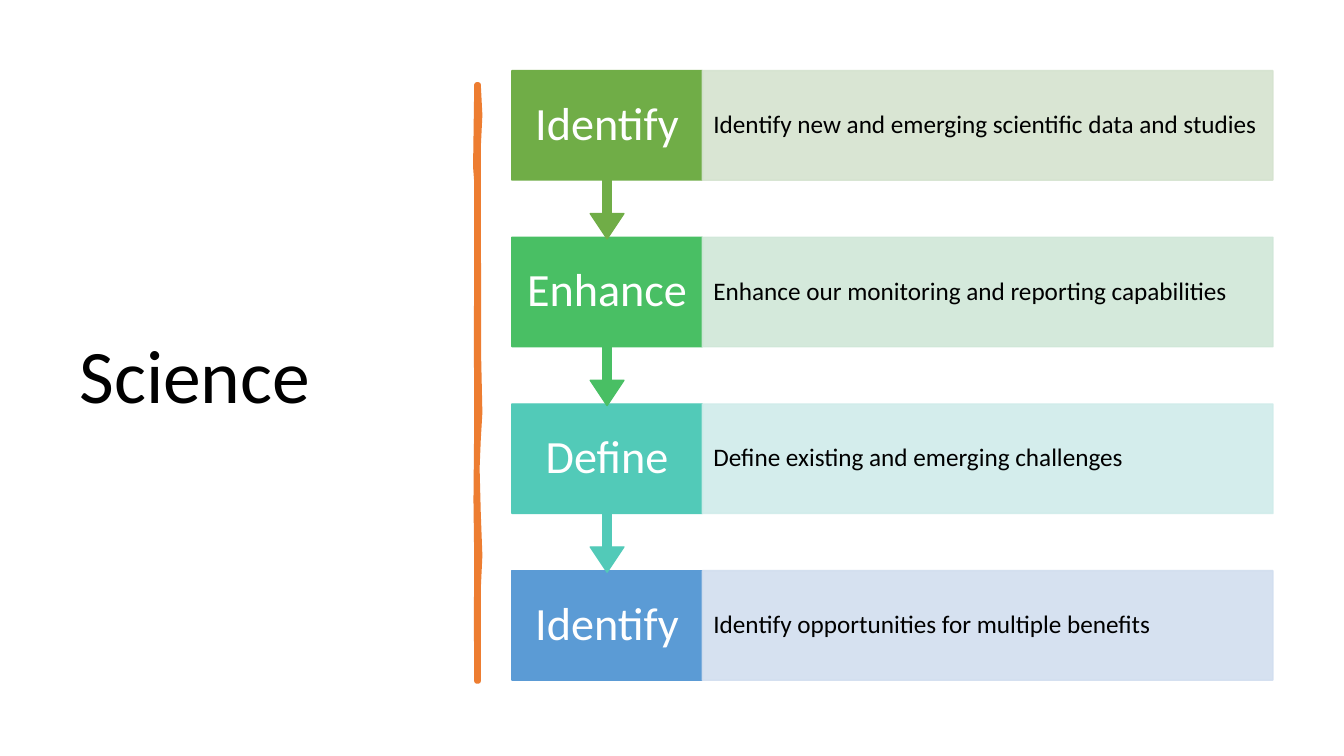
from dataclasses import dataclass

from lxml.etree import SubElement
from pptx import Presentation
from pptx.dml.color import RGBColor
from pptx.enum.shapes import MSO_SHAPE
from pptx.enum.text import MSO_ANCHOR, MSO_AUTO_SIZE, PP_ALIGN
from pptx.oxml.ns import qn
from pptx.util import Cm, Pt


@dataclass(frozen=True)
class Theme:
    font: str = "Calibri"
    title: int = 54
    label: int = 33
    body: int = 18
    ink: str = "000000"
    paper: str = "FFFFFF"
    accent: str = "ED7D31"


STEPS = [
    ("Identify", "Identify new and emerging scientific data and studies", "70AD47", "D5E3CF"),
    ("Enhance", "Enhance our monitoring and reporting capabilities", "49BF64", "D0E7D8"),
    ("Define", "Define existing and emerging challenges", "52CAB8", "D0ECEA"),
    ("Identify", "Identify opportunities for multiple benefits", "5B9BD5", "D2DEEF"),
]
STROKE = [
    (12.06, 2.13), (12.1, 2.9), (12.06, 3.71), (12.06, 5.74), (12.07, 7.47),
    (12.07, 9.04), (12.1, 10.4), (12.06, 11.07), (12.03, 11.8), (12.06, 12.95),
    (12.1, 14), (12.06, 14.83), (12.06, 17.17), (12.01, 17.17), (12, 15.57),
    (12.01, 14.15), (11.99, 12.6), (12.01, 10.54), (12, 8.51), (12.01, 6.35),
    (12.01, 4.6), (11.98, 4.2), (12.01, 2.13),
]
TOP, PITCH, HIGH = 1.78, 4.2, 2.76
LEFT, WIDE = 12.9, 4.8
RIGHT, SPAN = LEFT + WIDE, 14.38
DROP, ADJUST = 4.24, (0.05, 0.1, 0.15, 0.65)


class Deck:
    def __init__(self, theme):
        self.theme = theme
        self.file = Presentation()
        self.file.slide_width, self.file.slide_height = Cm(33.87), Cm(19.05)
        self.slide = self.file.slides.add_slide(self.file.slide_layouts[5])

    def letter(self, frame, text, size, color, align):
        frame.word_wrap = True
        frame.auto_size = MSO_AUTO_SIZE.NONE
        frame.vertical_anchor = MSO_ANCHOR.MIDDLE
        line = frame.paragraphs[0]
        line.text = text
        line.alignment = align
        line.line_spacing = 0.9
        line.font.name = self.theme.font
        line.font.size = Pt(size)
        line.font.color.rgb = RGBColor.from_string(color)

    def paint(self, shape, color, width, alpha=100):
        shape.shadow.inherit = False
        shape.line.width = Pt(width)
        for fill in (shape.fill, shape.line.fill):
            fill.solid()
            fill.fore_color.rgb = RGBColor.from_string(color)
        if alpha < 100:
            for tint in shape.element.spPr.iter(qn("a:srgbClr")):
                SubElement(tint, qn("a:alpha")).set("val", str(alpha * 1000))

    def title(self, text, *box):
        shape = self.slide.shapes.title
        shape.left, shape.top, shape.width, shape.height = map(Cm, box)
        self.letter(shape.text_frame, text, self.theme.title, self.theme.ink, PP_ALIGN.LEFT)

    def stroke(self, points):
        start, *rest = [(round(x * 100), round(y * 100)) for x, y in points]
        pen = self.slide.shapes.build_freeform(*start, scale=Cm(0.01))
        pen.add_line_segments(rest, close=True)
        self.paint(pen.convert_to_shape(), self.theme.accent, 3.25)

    def block(self, kind, box, color, alpha=100):
        shape = self.slide.shapes.add_shape(kind, *map(Cm, box))
        self.paint(shape, color, 1, alpha)
        return shape

    def label(self, text, top, color, arrow):
        kind = MSO_SHAPE.DOWN_ARROW_CALLOUT if arrow else MSO_SHAPE.RECTANGLE
        shape = self.block(kind, (LEFT, top, WIDE, DROP if arrow else HIGH), color)
        if arrow:
            for i, value in enumerate(ADJUST):
                shape.adjustments[i] = value
        frame = shape.text_frame
        frame.margin_left = frame.margin_right = Cm(0.3)
        self.letter(frame, text, self.theme.label, self.theme.paper, PP_ALIGN.CENTER)

    def detail(self, text, top, color):
        shape = self.block(MSO_SHAPE.RECTANGLE, (RIGHT, top, SPAN, HIGH), color, 90)
        frame = shape.text_frame
        frame.margin_left = frame.margin_right = Cm(0.28)
        self.letter(frame, text, self.theme.body, self.theme.ink, PP_ALIGN.LEFT)


def main():
    deck = Deck(Theme())
    deck.title("Science", 1.75, 1.78, 9.5, 15.52)
    deck.stroke(STROKE)
    last = len(STEPS) - 1
    for i, (name, text, color, pale) in reversed(list(enumerate(STEPS))):
        top = TOP + i * PITCH
        deck.label(name, top, color, i < last)
        deck.detail(text, top, pale)
    deck.file.save("out.pptx")


if __name__ == "__main__":
    main()
